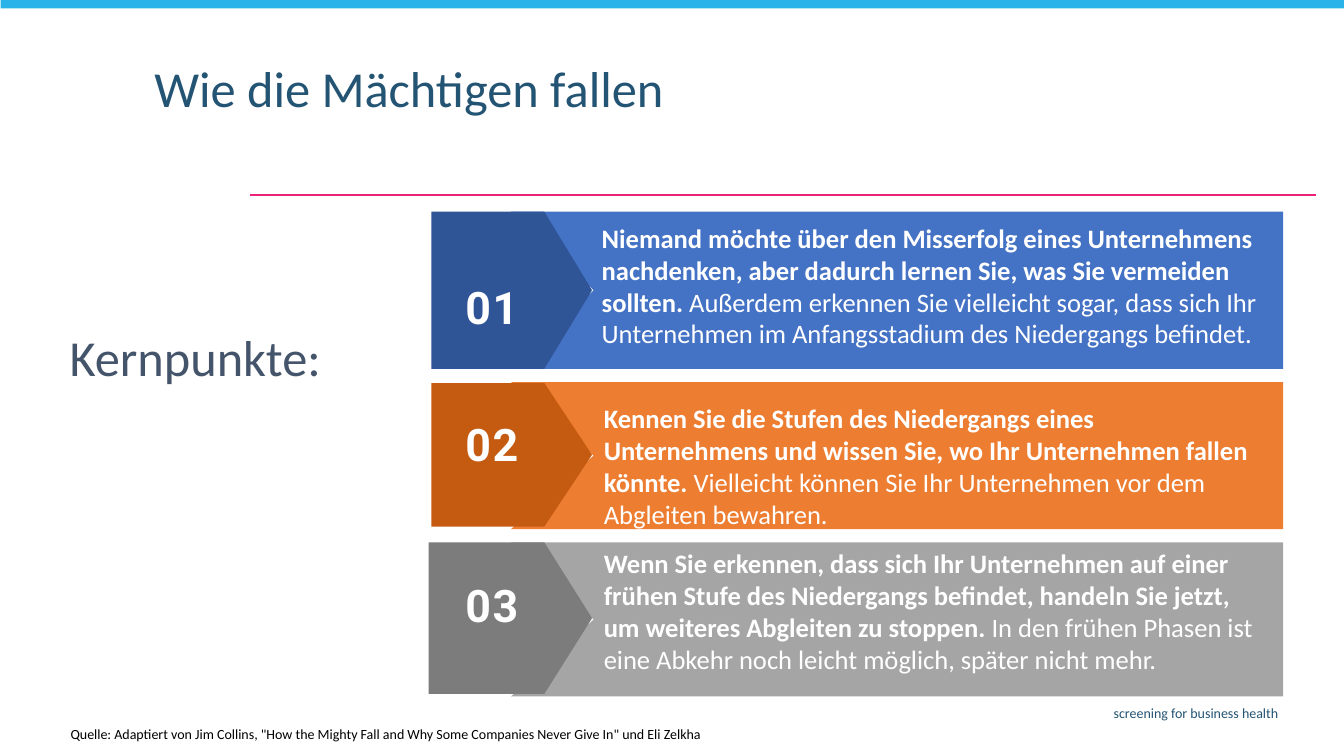
from lxml import etree
from pptx import Presentation
from pptx.dml.color import RGBColor
from pptx.enum.shapes import MSO_CONNECTOR, MSO_SHAPE
from pptx.enum.text import MSO_ANCHOR, MSO_AUTO_SIZE, PP_ALIGN
from pptx.oxml.ns import qn
from pptx.util import Pt

LEFT, CENTER, RIGHT = PP_ALIGN.LEFT, PP_ALIGN.CENTER, PP_ALIGN.RIGHT
TOP, MIDDLE, BOTTOM = MSO_ANCHOR.TOP, MSO_ANCHOR.MIDDLE, MSO_ANCHOR.BOTTOM
GROW, FIXED = MSO_AUTO_SIZE.SHAPE_TO_FIT_TEXT, MSO_AUTO_SIZE.NONE

COLORS = {
    "top bar": "29B3E8",
    "rule": "EC2179",
    "title": "245473",
    "heading": "44546A",
    "source": "000000",
    "white": "FFFFFF",
    "blue": "4472C4",
    "dark blue": "2F5597",
    "orange": "ED7D31",
    "dark orange": "C55A11",
    "gray": "A5A5A5",
    "dark gray": "7C7C7C",
}


def add_text(box, runs, size, color, font="Calibri", align=LEFT, anchor=TOP,
             inset=3.6, wrap=True, fit=GROW):
    """Add a one-paragraph text box; runs are (text, bold) pairs."""
    frame = slide.shapes.add_textbox(*map(Pt, box)).text_frame
    frame_format = {
        "word_wrap": wrap, "auto_size": fit, "vertical_anchor": anchor,
        "margin_left": Pt(inset), "margin_right": Pt(inset),
        "margin_top": Pt(inset), "margin_bottom": Pt(inset),
    }
    for name, value in frame_format.items():
        setattr(frame, name, value)
    paragraph = frame.paragraphs[0]
    paragraph.alignment = align
    for text, bold in runs:
        run = paragraph.add_run()
        run.text = text
        for name, value in {"name": font, "size": Pt(size), "bold": bold}.items():
            setattr(run.font, name, value)
        run.font.color.rgb = RGBColor.from_string(COLORS[color])
    return paragraph


def add_filled_outline(points, color):
    corners = [(Pt(x), Pt(y)) for x, y in points]
    builder = slide.shapes.build_freeform(*corners[0])
    builder.add_line_segments(corners[1:], close=True)
    shape = builder.convert_to_shape()
    shape.shadow.inherit = False
    shape.fill.solid()
    shape.fill.fore_color.rgb = RGBColor.from_string(COLORS[color])
    shape.line.fill.background()


presentation = Presentation()
presentation.slide_width, presentation.slide_height = Pt(960), Pt(540)
slide = presentation.slides.add_slide(presentation.slide_layouts[6])

# Frame of the slide
rule = slide.shapes.add_connector(
    MSO_CONNECTOR.STRAIGHT, Pt(940.3), Pt(139), Pt(178.6), Pt(139))
rule.line.color.rgb = RGBColor.from_string(COLORS["rule"])
rule.line.width = Pt(1.5)
etree.SubElement(rule.line._get_or_add_ln().getparent(), qn("a:effectLst"))

top_bar = slide.shapes.add_shape(MSO_SHAPE.RECTANGLE, Pt(0.5), Pt(-1.2), Pt(960), Pt(7.2))
top_bar.shadow.inherit = False
top_bar.fill.solid()
top_bar.fill.fore_color.rgb = RGBColor.from_string(COLORS["top bar"])
top_bar.line.fill.background()

title = add_text((106.6, 42.5, 697, 54.7), [("Wie die Mächtigen fallen", False)],
                 36, "title", fit=FIXED)
title.line_spacing = 0.9
add_text((46.8, 230.4, 210.2, 50.4), [("Kernpunkte:", False)], 36, "heading", inset=2.9)
add_text((266.4, 499.7, 650.2, 18), [("screening for business health", False)],
         10, "title", align=RIGHT)
add_text((46.8, 515.5, 502.6, 18),
         [('Quelle: Adaptiert von Jim Collins, "How the Mighty Fall and Why Some '
           'Companies Never Give In" und Eli Zelkha', False)],
         10, "source", anchor=BOTTOM)

# Key points: notched body, arrow-shaped tag, number and text
BODY_LEFT, NOTCH, BODY_RIGHT = 365, 424.1, 916.6
TAG_SHOULDER, TAG_TIP = 388.8, 422.9

key_points = [
    {"color": "blue", "body": (151.2, 263.5), "tag": (308.2, 151.2, 263.5),
     "number top": 200.2, "text box": (426.2, 154.8, 491, 99.4),
     "bold": "Niemand möchte über den Misserfolg eines Unternehmens nachdenken, "
             "aber dadurch lernen Sie, was Sie vermeiden sollten. ",
     "plain": "Außerdem erkennen Sie vielleicht sogar, dass sich Ihr Unternehmen "
              "im Anfangsstadium des Niedergangs befindet."},
    {"color": "orange", "body": (272.9, 378), "tag": (308.2, 273.6, 376.2),
     "number top": 298.1, "text box": (427.7, 283.7, 470.9, 99.4),
     "bold": "Kennen Sie die Stufen des Niedergangs eines Unternehmens und "
             "wissen Sie, wo Ihr Unternehmen fallen könnte. ",
     "plain": "Vielleicht können Sie Ihr Unternehmen vor dem Abgleiten bewahren."},
    {"color": "gray", "body": (387.4, 497.5), "tag": (306.2, 387.4, 495.7),
     "number top": 412.6, "text box": (427.7, 387.4, 474.5, 99.4),
     "bold": "Wenn Sie erkennen, dass sich Ihr Unternehmen auf einer frühen Stufe "
             "des Niedergangs befindet, handeln Sie jetzt, um weiteres Abgleiten "
             "zu stoppen. ",
     "plain": "In den frühen Phasen ist eine Abkehr noch leicht möglich, "
              "später nicht mehr."},
]

for number, point in enumerate(key_points, start=1):
    top, bottom = point["body"]
    add_filled_outline(
        [(BODY_LEFT, top), (NOTCH, (top + bottom) / 2), (BODY_LEFT, bottom),
         (BODY_RIGHT, bottom), (BODY_RIGHT, top)], point["color"])

    tag_left, top, bottom = point["tag"]
    add_filled_outline(
        [(TAG_SHOULDER, bottom), (tag_left, bottom), (tag_left, top),
         (TAG_SHOULDER, top), (TAG_TIP, (top + bottom) / 2)],
        "dark " + point["color"])

    label = add_text((331.9, point["number top"], 38.9, 38.2), [(f"{number:02}", True)],
                     32, "white", font="Roboto", align=CENTER, anchor=MIDDLE,
                     inset=0, wrap=False)
    label.runs[0]._r.get_or_add_rPr().set("spc", "110")
    add_text(point["text box"], [(point["bold"], True), (point["plain"], False)],
             19, "white")

presentation.save("out.pptx")
